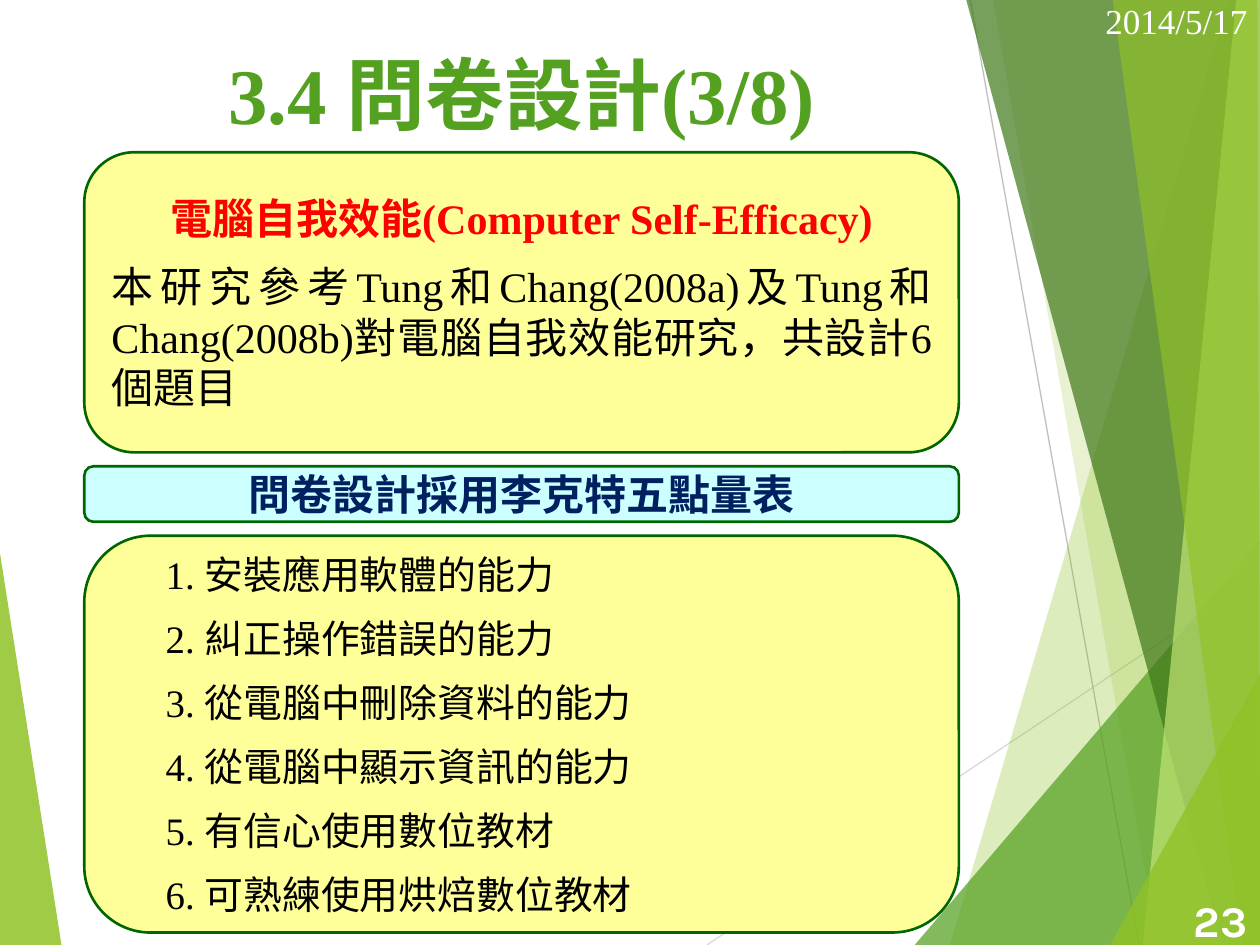
"""Build the questionnaire design slide on computer self-efficacy."""
from dataclasses import dataclass

from lxml.etree import SubElement
from pptx import Presentation
from pptx.dml.color import RGBColor
from pptx.enum.shapes import MSO_CONNECTOR, MSO_SHAPE
from pptx.enum.text import MSO_ANCHOR, MSO_AUTO_SIZE, PP_ALIGN
from pptx.oxml.ns import qn
from pptx.util import Cm, Pt


@dataclass(frozen=True)
class Theme:
    lime: str = "90C226"
    green: str = "54A021"
    forest: str = "3F7819"
    pale: str = "C0E474"
    yellow: str = "FFFF99"
    cyan: str = "CCFFFF"
    border: str = "006600"
    red: str = "FF0000"
    navy: str = "002060"
    black: str = "000000"
    white: str = "FFFFFF"
    light_rule: str = "D9D9D9"
    dark_rule: str = "BFBFBF"
    font: str = "Times New Roman"
    number_font: str = "Karla"
    title_size: float = 45
    body_size: float = 24
    item_size: float = 22.2
    date_size: float = 20
    number_size: float = 25


T = Theme()


def place(sp, left, top, width, height):
    sp.left, sp.top, sp.width, sp.height = (Cm(v) for v in (left, top, width, height))
    tf = sp.text_frame
    tf.word_wrap = True
    tf.auto_size = MSO_AUTO_SIZE.NONE
    tf.vertical_anchor = MSO_ANCHOR.MIDDLE
    return tf


def style(p, align, size, color, bold=False, font=T.font, before=0):
    p.alignment = align
    p.space_before = Pt(before)
    for r in p.runs:
        r.font.name = font
        r.font.size = Pt(size)
        r.font.bold = bold
        r.font.color.rgb = RGBColor.from_string(color)


prs = Presentation()
prs.slide_width, prs.slide_height = Cm(25.4), Cm(19.05)
s = prs.slides.add_slide(prs.slide_layouts[5])

rules = [
    (14.25, 19.05, 25.4, 11.61, T.light_rule),
    (19.56, 0, 22.96, 19.05, T.dark_rule),
]
for x1, y1, x2, y2, color in rules:
    line = s.shapes.add_connector(MSO_CONNECTOR.STRAIGHT, Cm(x1), Cm(y1), Cm(x2), Cm(y2))
    line.line.color.rgb = RGBColor.from_string(color)
    line.line.width = Pt(0.75)
    SubElement(line._element.spPr, qn("a:effectLst"))

facets = [
    (T.lime, 85, [(0, 11.15), (1.24, 19.05), (0, 19.05)]),
    (T.lime, 30, [(24.77, 0), (19.15, 19.05), (25.4, 19.05), (25.4, 0)]),
    (T.lime, 20, [(20.02, 0), (23.34, 19.05), (25.4, 19.05), (25.4, 0)]),
    (T.green, 72, [(18.44, 19.05), (25.4, 10.9), (25.4, 19.05)]),
    (T.forest, 70, [(19.48, 0), (24.64, 19.05), (25.4, 19.05), (25.4, 0)]),
    (T.pale, 70, [(24.92, 0), (23.04, 19.05), (25.4, 19.05), (25.4, 0)]),
    (T.lime, 65, [(22.43, 0), (25.04, 19.05), (25.4, 19.05), (25.35, 0)]),
    (T.lime, 80, [(22.38, 19.05), (25.4, 13.59), (25.4, 19.05)]),
]
for color, opacity, corners in facets:
    points = [(Cm(x), Cm(y)) for x, y in corners]
    fb = s.shapes.build_freeform(*points[0])
    fb.add_line_segments(points[1:], close=True)
    sp = fb.convert_to_shape()
    sp.shadow.inherit = False
    sp.line.fill.background()
    sp.fill.solid()
    sp.fill.fore_color.rgb = RGBColor.from_string(color)
    clr = sp._element.spPr.find(qn("a:solidFill"))[0]
    SubElement(clr, qn("a:alpha"), val=str(opacity * 1000))

tf = place(s.shapes.title, 1.7, 0.91, 17.63, 1.91)
tf.text = "3.4 問卷設計(3/8)"
style(tf.paragraphs[0], PP_ALIGN.CENTER, T.title_size, T.green, bold=True)

panels = []
for top, height, fill in [(3.07, 6.05, T.yellow), (9.4, 1.12, T.cyan), (10.8, 8, T.yellow)]:
    sp = s.shapes.add_shape(MSO_SHAPE.ROUNDED_RECTANGLE, 0, 0, 0, 0)
    sp.shadow.inherit = False
    sp.fill.solid()
    sp.fill.fore_color.rgb = RGBColor.from_string(fill)
    sp.line.color.rgb = RGBColor.from_string(T.border)
    sp.line.width = Pt(1.5)
    panels.append(place(sp, 1.7, top, 17.63, height))
intro, scale, items = panels

intro.text = (
    "電腦自我效能(Computer Self-Efficacy)\n"
    "本研究參考Tung和Chang(2008a)及Tung和Chang(2008b)對電腦自我效能研究，共設計6個題目"
)
heading, body = intro.paragraphs
style(heading, PP_ALIGN.CENTER, T.body_size, T.red, bold=True, before=10)
style(body, PP_ALIGN.JUSTIFY, T.body_size, T.black, before=10)

scale.text = "問卷設計採用李克特五點量表"
style(scale.paragraphs[0], PP_ALIGN.CENTER, T.body_size, T.navy, bold=True, before=10)

abilities = [
    "安裝應用軟體的能力",
    "糾正操作錯誤的能力",
    "從電腦中刪除資料的能力",
    "從電腦中顯示資訊的能力",
    "有信心使用數位教材",
    "可熟練使用烘焙數位教材",
]
items.text = "\n".join(f"{n}. {ability}" for n, ability in enumerate(abilities, 1))
for p in items.paragraphs:
    style(p, PP_ALIGN.JUSTIFY, T.item_size, T.black, before=10)
    p._p.get_or_add_pPr().set("marL", str(Cm(1)))

labels = [
    ("23", (23.5, 18.03, 1.9, 1.02), T.number_size, True, T.number_font),
    ("2014/5/17", (22.02, -0.1, 3.38, 1.02), T.date_size, False, T.font),
]
for text, box, size, bold, font in labels:
    tf = place(s.shapes.add_textbox(0, 0, 0, 0), *box)
    tf.text = text
    style(tf.paragraphs[0], PP_ALIGN.RIGHT, size, T.white, bold, font)

prs.save("out.pptx")
